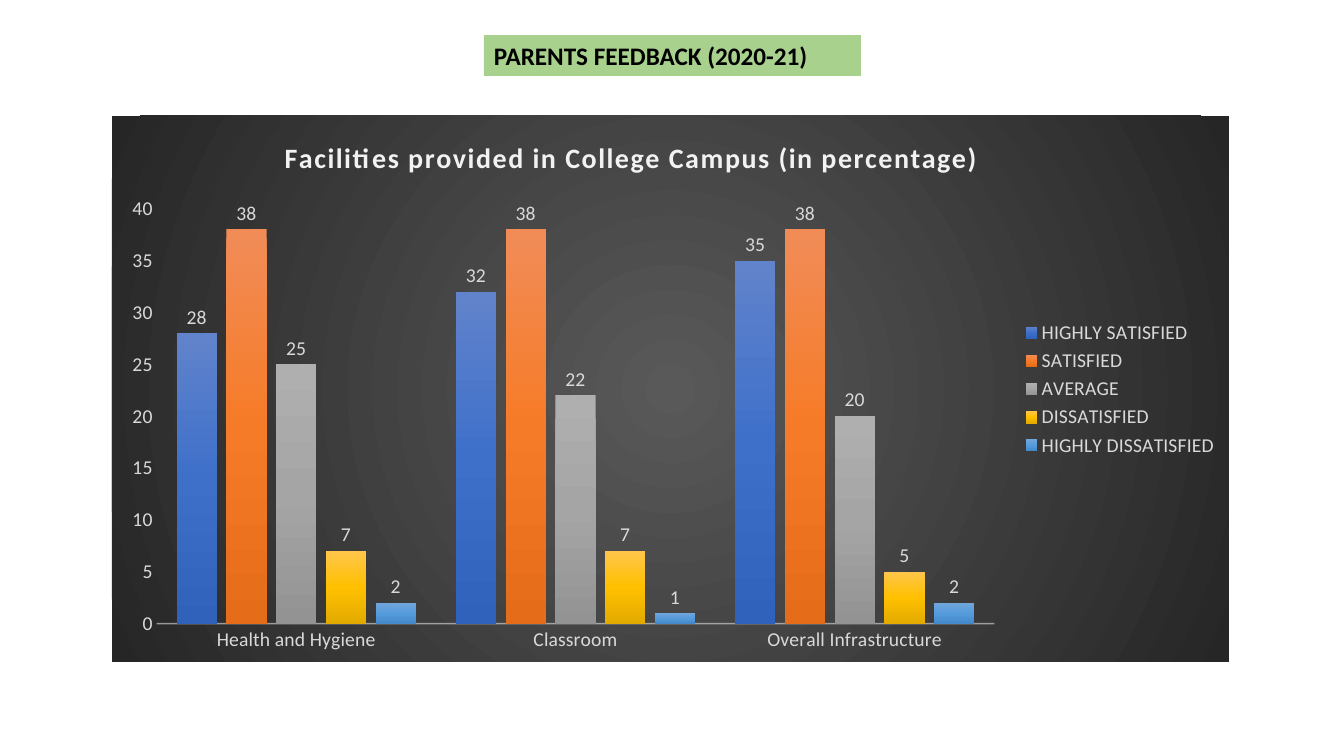
import pptx
import pptx.chart.data
import pptx.dml.color
import pptx.enum.chart
import pptx.enum.shapes
import pptx.enum.text
import pptx.oxml
import pptx.oxml.ns
import pptx.util
from dataclasses import dataclass

PX = 12192000 / 1344
NAMESPACES = pptx.oxml.ns.nsdecls("a", "c")
color = pptx.dml.color.RGBColor.from_string


@dataclass(frozen=True)
class Theme:
    font: str = "Calibri"
    banner: str = "A9D18E"
    banner_text: str = "000000"
    chart_title: str = "F2F2F2"
    chart_text: str = "D9D9D9"
    axis_line: str = "F2F2F2"
    backdrop: tuple = ("595959", "262626")
    banner_size: int = 18
    title_size: int = 20
    chart_size: int = 14


theme = Theme()


def gradient(stops, direction):
    """Return a gradFill element with evenly spaced colour stops."""
    marks = "".join(
        f'<a:gs pos="{100000 * i // (len(stops) - 1)}"><a:srgbClr val="{stop}"/></a:gs>'
        for i, stop in enumerate(stops)
    )
    return pptx.oxml.parse_xml(
        f"<a:gradFill {NAMESPACES}><a:gsLst>{marks}</a:gsLst>{direction}</a:gradFill>"
    )


def set_layout(parent, index, target, **fractions):
    """Place a chart part by fractions of the chart's width and height."""
    for old in parent.findall(pptx.oxml.ns.qn("c:layout")):
        parent.remove(old)
    modes = '<c:xMode val="edge"/><c:yMode val="edge"/>'
    values = "".join(f'<c:{key} val="{value}"/>' for key, value in fractions.items())
    parent.insert(index, pptx.oxml.parse_xml(
        f"<c:layout {NAMESPACES}><c:manualLayout>{target}{modes}{values}"
        "</c:manualLayout></c:layout>"
    ))


deck = pptx.Presentation()
deck.slide_width = round(1344 * PX)
deck.slide_height = round(756 * PX)
page = deck.slides.add_slide(deck.slide_layouts[6])

# Chart data and frame
categories = ["Health and Hygiene", "Classroom", "Overall Infrastructure"]
ratings = [
    ("HIGHLY SATISFIED", (28, 32, 35), ("6183CB", "3E70CA", "3062BB")),
    ("SATISFIED", (38, 38, 38), ("F18C57", "F67B28", "E56C19")),
    ("AVERAGE", (25, 22, 20), ("AFAFAF", "A5A5A5", "939393")),
    ("DISSATISFIED", (7, 7, 5), ("FFC64B", "FFC000", "E3AB00")),
    ("HIGHLY DISSATISFIED", (2, 1, 2), ("71A6DB", "559BDB", "448ACA")),
]
data = pptx.chart.data.CategoryChartData(number_format="0")
data.categories = categories
for name, values, stops in ratings:
    data.add_series(name, values)
chart = page.shapes.add_chart(
    pptx.enum.chart.XL_CHART_TYPE.COLUMN_CLUSTERED,
    *(round(n * PX) for n in (112, 116, 1117, 546)), data,
).chart
chart.font.name = theme.font
chart.font.size = pptx.util.Pt(theme.chart_size)
chart.font.color.rgb = color(theme.chart_text)

backdrop = pptx.oxml.parse_xml(f"<c:spPr {NAMESPACES}><a:ln><a:noFill/></a:ln></c:spPr>")
backdrop.insert(0, gradient(
    theme.backdrop,
    '<a:path path="circle"><a:fillToRect l="50000" t="50000" r="50000" b="50000"/></a:path>',
))
chart_part = chart.element.find(pptx.oxml.ns.qn("c:chart"))
chart_part.addnext(backdrop)
set_layout(chart_part.find(pptx.oxml.ns.qn("c:plotArea")), 0,
           '<c:layoutTarget val="inner"/>', x=0.04, y=0.17, w=0.75, h=0.76)

# Chart title
chart.has_title = True
span = chart.chart_title.text_frame.paragraphs[0].add_run()
span.text = "Facilities provided in College Campus (in percentage)"
span.font.name = theme.font
span.font.size = pptx.util.Pt(theme.title_size)
span.font.bold = True
span.font.color.rgb = color(theme.chart_title)
span.font._element.set("spc", "100")
chart.chart_title.include_in_layout = False
set_layout(chart_part.find(pptx.oxml.ns.qn("c:title")), 1, "", x=0.15, y=0.03)

# Columns and their labels
plot = chart.plots[0]
plot.gap_width = 100
plot.overlap = -24
plot.vary_by_categories = False
for series, (name, values, stops) in zip(plot.series, ratings):
    series.format.line.fill.background()
    series._element.get_or_add_spPr().insert(
        0, gradient(stops, '<a:lin ang="5400000" scaled="0"/>'))
    labels = series.data_labels
    labels.show_value = True
    labels.position = pptx.enum.chart.XL_LABEL_POSITION.OUTSIDE_END
    labels.font.name = theme.font
    labels.font.size = pptx.util.Pt(theme.chart_size)
    labels.font.color.rgb = color(theme.chart_text)

# Axes and legend
for axis in (chart.category_axis, chart.value_axis):
    axis.major_tick_mark = pptx.enum.chart.XL_TICK_MARK.NONE
    axis.minor_tick_mark = pptx.enum.chart.XL_TICK_MARK.NONE
    axis.has_major_gridlines = False
chart.value_axis.minimum_scale = 0
chart.value_axis.maximum_scale = 40
chart.value_axis.major_unit = 5
chart.value_axis.format.line.fill.background()

baseline = chart.category_axis.format.line
baseline.width = pptx.util.Pt(1)
baseline.color.rgb = color(theme.axis_line)
for shade in chart.category_axis._element.iter(pptx.oxml.ns.qn("a:srgbClr")):
    shade.append(pptx.oxml.parse_xml(f'<a:alpha {NAMESPACES} val="54000"/>'))

chart.has_legend = True
chart.legend.position = pptx.enum.chart.XL_LEGEND_POSITION.RIGHT
chart.legend.include_in_layout = False

# Banner
banner = page.shapes.add_shape(
    pptx.enum.shapes.MSO_SHAPE.RECTANGLE, *(round(n * PX) for n in (484, 35, 377, 41)))
banner.shadow.inherit = False
banner.fill.solid()
banner.fill.fore_color.rgb = color(theme.banner)
banner.line.fill.background()
banner.text_frame.word_wrap = True
banner.text_frame.vertical_anchor = pptx.enum.text.MSO_ANCHOR.TOP
para = banner.text_frame.paragraphs[0]
para.alignment = pptx.enum.text.PP_ALIGN.LEFT
span = para.add_run()
span.text = "PARENTS FEEDBACK (2020-21)"
span.font.name = theme.font
span.font.size = pptx.util.Pt(theme.banner_size)
span.font.bold = True
span.font.color.rgb = color(theme.banner_text)

deck.save("out.pptx")
